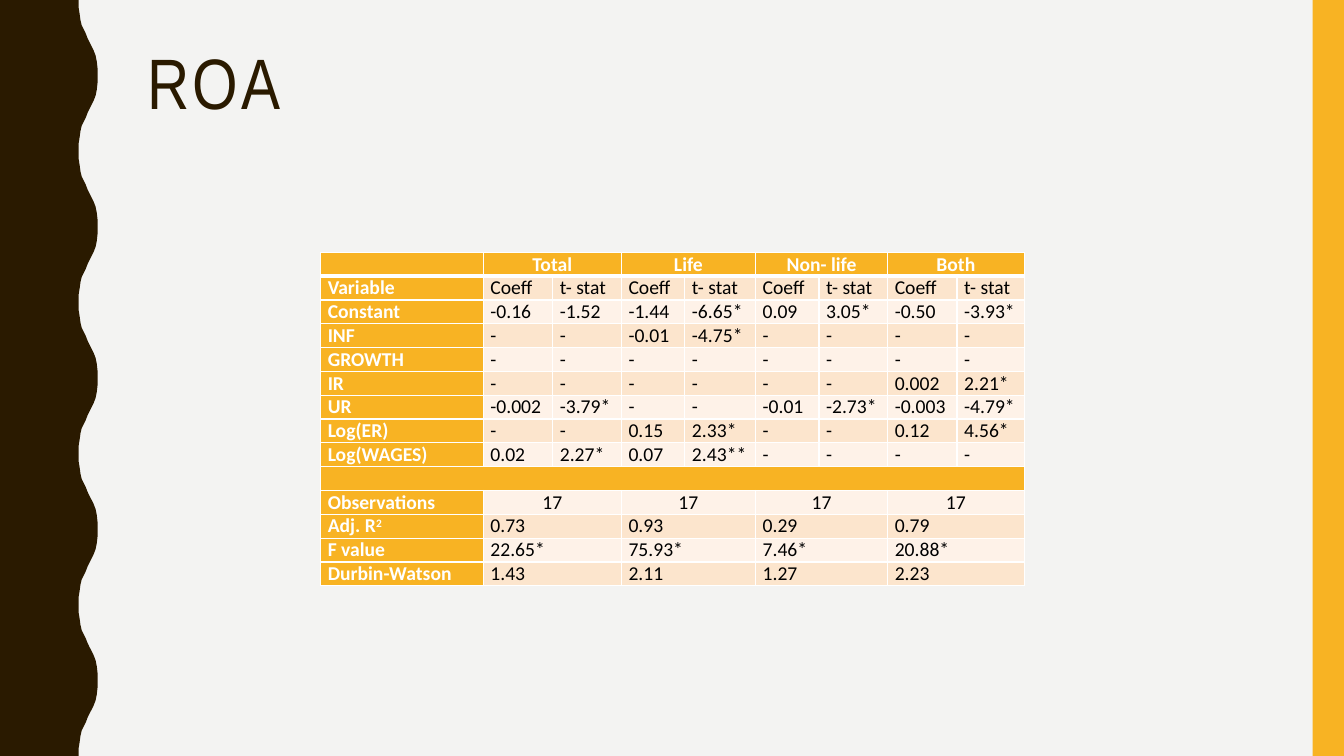
from dataclasses import dataclass

from lxml.etree import SubElement
from pptx import Presentation
from pptx.dml.color import RGBColor
from pptx.enum.shapes import MSO_SHAPE as Shape
from pptx.enum.text import MSO_ANCHOR as Anchor, PP_ALIGN as Align
from pptx.oxml.ns import qn
from pptx.util import Cm, Pt

BROWN, GOLD, PAPER = "2A1A00", "F8B323", "F3F3F2"
WHITE, BLACK = "FFFFFF", "000000"
BANDS = ("FEF2E8", "FCE5CD")
WIDTH, HEIGHT = 33.87, 19.05
WAVES = 5
HALF_WAVE = [
    (1.98, 0), (1.98, 0.18), (2.01, 0.36), (2.03, 0.51), (2.06, 0.64),
    (2.11, 0.74), (2.16, 0.84), (2.21, 0.97), (2.26, 1.07), (2.31, 1.17),
    (2.36, 1.27), (2.41, 1.4), (2.44, 1.55), (2.46, 1.73), (2.46, 1.91),
]
COL_WIDTHS = (4.1, 1.75, 1.73, 1.6, 1.78, 1.6, 1.73, 1.75, 1.69)
ROW_HEIGHT = 0.6


@dataclass
class Row:
    """One table row; each value fills an equal share of the eight data columns."""
    label: str
    values: list[str]
    align: Align = Align.JUSTIFY
    superscript: str = ""
    solid: bool = False


ROWS = [
    Row("", ["Total", "Life", "Non- life", "Both"], Align.CENTER, solid=True),
    Row("Variable", ["Coeff", "t- stat"] * 4),
    Row("Constant", ["-0.16", "-1.52", "-1.44", "-6.65*", "0.09", "3.05*", "-0.50", "-3.93*"]),
    Row("INF", ["-", "-", "-0.01", "-4.75*", "-", "-", "-", "-"]),
    Row("GROWTH", ["-"] * 8),
    Row("IR", ["-", "-", "-", "-", "-", "-", "0.002", "2.21*"]),
    Row("UR", ["-0.002", "-3.79*", "-", "-", "-0.01", "-2.73*", "-0.003", "-4.79*"]),
    Row("Log(ER)", ["-", "-", "0.15", "2.33*", "-", "-", "0.12", "4.56*"]),
    Row("Log(WAGES)", ["0.02", "2.27*", "0.07", "2.43**", "-", "-", "-", "-"]),
    Row("", [], solid=True),
    Row("Observations", ["17"] * 4, Align.CENTER),
    Row("Adj. R", ["0.73", "0.93", "0.29", "0.79"], superscript="2"),
    Row("F value", ["22.65*", "75.93*", "7.46*", "20.88*"]),
    Row("Durbin-Watson", ["1.43", "2.11", "1.27", "2.23"]),
]


def paint(fill, color: str) -> None:
    fill.solid()
    fill.fore_color.rgb = RGBColor.from_string(color)


def style_shape(sp, color: str) -> None:
    sp.shadow.inherit = False
    paint(sp.fill, color)
    sp.line.fill.background()


def add_run(p, text: str, font: str, size: float, color: str, bold: bool = False):
    r = p.add_run()
    r.text = text
    r.font.name, r.font.size, r.font.bold = font, Pt(size), bold
    r.font.color.rgb = RGBColor.from_string(color)
    return r


def add_wavy_edge(slide) -> None:
    depth = HEIGHT / WAVES
    wave = HALF_WAVE + [(x, depth - y) for x, y in HALF_WAVE[-2::-1]]
    edge = [(x, n * depth + y) for n in range(WAVES) for x, y in wave]
    points = [(Cm(x), Cm(y)) for x, y in edge + [(0, HEIGHT)]]
    builder = slide.shapes.build_freeform(0, 0)
    builder.add_line_segments(points, close=True)
    style_shape(builder.convert_to_shape(), BROWN)


def add_title(slide, text: str) -> None:
    tf = slide.shapes.add_textbox(Cm(3.48), Cm(1.07), Cm(28.27), Cm(4.14)).text_frame
    tf.word_wrap = True
    tf.vertical_anchor = Anchor.TOP
    p = tf.paragraphs[0]
    p.line_spacing = 0.9
    r = add_run(p, text, "Arial Narrow", 51, BROWN)
    r.font._element.set("spc", "200")


def add_borders(cell, top: float, bottom: float) -> None:
    tc_pr = cell._tc.get_or_add_tcPr()
    for side, width in (("L", 1), ("R", 1), ("T", top), ("B", bottom)):
        ln = SubElement(tc_pr, qn(f"a:ln{side}"), w=str(Pt(width)))
        SubElement(SubElement(ln, qn("a:solidFill")), qn("a:srgbClr"), val=WHITE)


def format_cell(cell, color: str, row_index: int) -> None:
    cell.margin_left = cell.margin_right = Cm(0.18)
    cell.margin_top = cell.margin_bottom = 0
    add_borders(cell, 3 if row_index == 1 else 1, 3 if row_index == 0 else 1)
    paint(cell.fill, color)


def write_cell(cell, text: str, align: Align, color: str, bold: bool, superscript: str = "") -> None:
    p = cell.text_frame.paragraphs[0]
    p.alignment = align
    if text:
        add_run(p, text, "Calibri", 14, color, bold)
    if superscript:
        r = add_run(p, superscript, "Calibri", 14, color, bold)
        r.font._element.set("baseline", "30000")


def add_results_table(slide) -> None:
    n_data = len(COL_WIDTHS) - 1
    frame = slide.shapes.add_table(len(ROWS), n_data + 1, Cm(8.08), Cm(6.36),
                                   Cm(sum(COL_WIDTHS)), Cm(ROW_HEIGHT * len(ROWS)))
    table = frame.table
    table.first_row = table.horz_banding = False
    for column, width in zip(table.columns, COL_WIDTHS):
        column.width = Cm(width)
    for i, row in enumerate(ROWS):
        table.rows[i].height = Cm(ROW_HEIGHT)
        for j in range(n_data + 1):
            cell = table.cell(i, j)
            format_cell(cell, GOLD if row.solid or j == 0 else BANDS[i % 2], i)
            # Empty cells need a small end mark so the row keeps its height
            SubElement(cell.text_frame.paragraphs[0]._p, qn("a:endParaRPr"), sz="1400")
        write_cell(table.cell(i, 0), row.label, Align.JUSTIFY, WHITE, True, row.superscript)
        if not row.values:
            table.cell(i, 0).merge(table.cell(i, n_data))
            continue
        span = n_data // len(row.values)
        for k, value in enumerate(row.values):
            first = 1 + k * span
            cell = table.cell(i, first)
            if span > 1:
                cell.merge(table.cell(i, first + span - 1))
            write_cell(cell, value, row.align, WHITE if row.solid else BLACK, row.solid)


def main() -> None:
    prs = Presentation()
    prs.slide_width, prs.slide_height = Cm(WIDTH), Cm(HEIGHT)
    slide = prs.slides.add_slide(prs.slide_layouts[6])
    paint(slide.background.fill, PAPER)
    add_wavy_edge(slide)
    bar_width = 0.79
    bar = slide.shapes.add_shape(Shape.RECTANGLE, Cm(WIDTH - bar_width), 0, Cm(bar_width), Cm(HEIGHT))
    style_shape(bar, GOLD)
    add_title(slide, "ROA")
    add_results_table(slide)
    prs.save("out.pptx")


if __name__ == "__main__":
    main()
